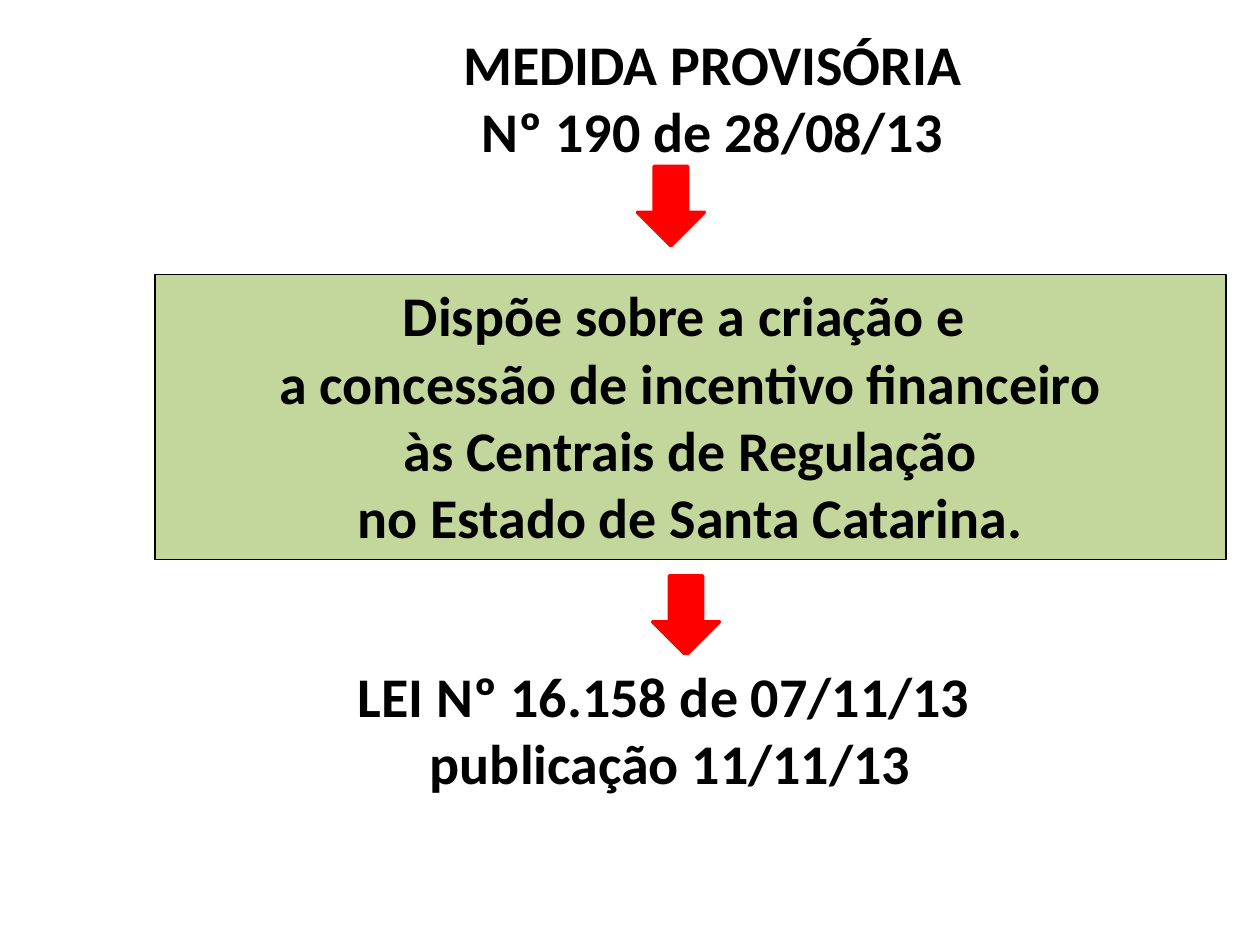
import pptx
import pptx.util
import pptx.dml.color
import pptx.enum.shapes
import pptx.enum.text

Inches = pptx.util.Inches
Pt = pptx.util.Pt
SHAPES = pptx.enum.shapes.MSO_SHAPE
ANCHOR = pptx.enum.text.MSO_ANCHOR
COLORS = {"text": "000000", "panel": "C3D69B", "arrow": "FF0000", "paper": "FFFFFF"}


def rgb(name):
    return pptx.dml.color.RGBColor.from_string(COLORS[name])


def add_shape(s, kind, box, fill, line=None, width=0.75):
    sp = s.shapes.add_shape(kind, *map(Inches, box))
    sp.shadow.inherit = False
    sp.fill.solid()
    sp.fill.fore_color.rgb = rgb(fill)
    if line:
        sp.line.color.rgb = rgb(line)
        sp.line.width = Pt(width)
    else:
        sp.line.fill.background()
    return sp


def add_lines(sp, lines, anchor):
    tf = sp.text_frame
    tf.word_wrap = True
    tf.vertical_anchor = anchor
    for i, line in enumerate(lines):
        p = tf.paragraphs[0] if i == 0 else tf.add_paragraph()
        p.alignment = pptx.enum.text.PP_ALIGN.CENTER
        r = p.add_run()
        r.text = line
        r.font.name = "Calibri"
        r.font.size = Pt(32)
        r.font.bold = True
        r.font.color.rgb = rgb("text")


def add_heading(s, box, lines):
    sp = s.shapes.add_textbox(*map(Inches, box))
    add_lines(sp, lines, ANCHOR.MIDDLE)


def add_panel(s, box, lines, fill, line=None):
    sp = add_shape(s, SHAPES.RECTANGLE, box, fill, line)
    add_lines(sp, lines, ANCHOR.TOP)


def add_down_arrow(s, left, top):
    add_shape(s, SHAPES.DOWN_ARROW, (left, top, 0.53, 0.63), "arrow", "arrow", 2)


def main():
    prs = pptx.Presentation()
    prs.slide_width = Inches(10)
    prs.slide_height = Inches(7.5)
    s = prs.slides.add_slide(prs.slide_layouts[6])
    add_heading(s, (2.4, 0.22, 6.61, 1.1),
                ["MEDIDA PROVISÓRIA ", "Nº 190 de 28/08/13 "])
    add_panel(s, (1.23, 2.18, 8.5, 2.26),
              ["Dispõe sobre a criação e ",
               "a concessão de incentivo financeiro",
               " às Centrais de Regulação ",
               "no Estado de Santa Catarina."], "panel", "text")
    add_down_arrow(s, 5.18, 4.57)
    add_panel(s, (1.49, 5.2, 7.56, 1.18),
              ["LEI Nº 16.158 de 07/11/13", " publicação 11/11/13"], "paper")
    add_down_arrow(s, 5.06, 1.32)
    prs.save("out.pptx")


if __name__ == "__main__":
    main()
